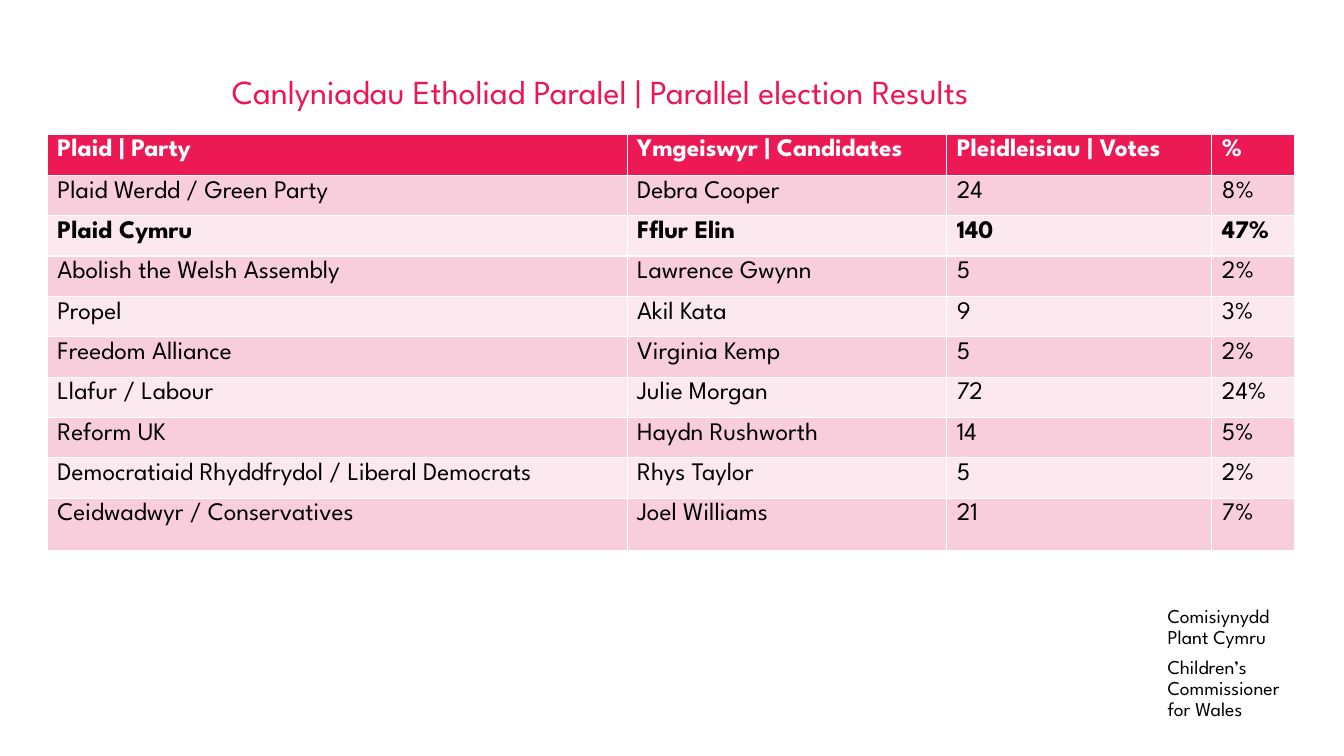
from pptx import Presentation
from pptx.dml.color import RGBColor
from pptx.enum.text import MSO_ANCHOR as Anchor, PP_ALIGN as Align
from pptx.util import Inches, Pt

FONT = "League Spartan"
PINK = RGBColor(0xED, 0x15, 0x56)
HEAD = RGBColor(0xEC, 0x19, 0x55)
DARK = RGBColor(0xF8, 0xCE, 0xDD)
PALE = RGBColor(0xFC, 0xE8, 0xEF)
WHITE = RGBColor(0xFF, 0xFF, 0xFF)
BLACK = RGBColor(0, 0, 0)

WIDTHS = (5.75, 3.17, 2.63, 0.82)
HEIGHTS = (0.41,) + (0.39,) * 8 + (0.52,)
WINNER = 2
ROWS = (
    ("Plaid | Party", "Ymgeiswyr | Candidates", "Pleidleisiau | Votes", "%"),
    ("Plaid Werdd / Green Party", "Debra Cooper", "24", "8%"),
    ("Plaid Cymru", "Fflur Elin", "140", "47%"),
    ("Abolish the Welsh Assembly", "Lawrence Gwynn", "5", "2%"),
    ("Propel", "Akil Kata", "9", "3%"),
    ("Freedom Alliance", "Virginia Kemp", "5", "2%"),
    ("Llafur / Labour", "Julie Morgan", "72", "24%"),
    ("Reform UK", "Haydn Rushworth", "14", "5%"),
    ("Democratiaid Rhyddfrydol / Liberal Democrats", "Rhys Taylor", "5", "2%"),
    ("Ceidwadwyr / Conservatives", "Joel Williams", "21", "7%"),
)
# \v marks a line break inside a paragraph
NAMES = ("Comisiynydd\vPlant Cymru", "Children’s\vCommissioner\vfor Wales")


def style(para, size, color, bold=False):
    font = para.font
    font.name, font.size, font.bold = FONT, Pt(size), bold
    font.color.rgb = color


def set_frame(frame, anchor):
    frame.margin_left = frame.margin_right = 0
    frame.margin_top = frame.margin_bottom = 0
    frame.word_wrap = True
    frame.vertical_anchor = anchor


def add_title(slide, left, top, width, height):
    title = slide.shapes.title
    title.left, title.top = Inches(left), Inches(top)
    title.width, title.height = Inches(width), Inches(height)
    set_frame(title.text_frame, Anchor.TOP)
    para = title.text_frame.paragraphs[0]
    para.text = "Canlyniadau Etholiad Paralel | Parallel election Results"
    para.alignment = Align.LEFT
    para.line_spacing = 0.9
    style(para, 24, PINK)


def add_results(slide, left, top):
    table = slide.shapes.add_table(
        len(ROWS), len(WIDTHS), Inches(left), Inches(top),
        Inches(sum(WIDTHS)), Inches(sum(HEIGHTS))).table
    for col, width in zip(table.columns, WIDTHS):
        col.width = Inches(width)
    for i, (texts, height) in enumerate(zip(ROWS, HEIGHTS)):
        table.rows[i].height = Inches(height)
        fill = HEAD if i == 0 else DARK if i % 2 else PALE
        for j, text in enumerate(texts):
            cell = table.cell(i, j)
            cell.fill.solid()
            cell.fill.fore_color.rgb = fill
            para = cell.text_frame.paragraphs[0]
            para.text = text
            style(para, 18, BLACK if i else WHITE, i in (0, WINNER))


def add_names(slide, left, top, width, height):
    box = slide.shapes.add_textbox(
        Inches(left), Inches(top), Inches(width), Inches(height))
    frame = box.text_frame
    set_frame(frame, Anchor.MIDDLE)
    for i, name in enumerate(NAMES):
        para = frame.add_paragraph() if i else frame.paragraphs[0]
        para.text = name
        para.line_spacing = 0.9
        para.space_after = Pt(0 if i else 6)
        style(para, 14, BLACK)


def main():
    deck = Presentation()
    deck.slide_width, deck.slide_height = Inches(13.33), Inches(7.5)
    slide = deck.slides.add_slide(deck.slide_layouts[5])  # title only
    add_names(slide, 11.58, 6.01, 1.38, 1.15)
    add_title(slide, 2.3, 0.75, 9.41, 0.76)
    add_results(slide, 0.47, 1.33)
    deck.save("out.pptx")


if __name__ == "__main__":
    main()
